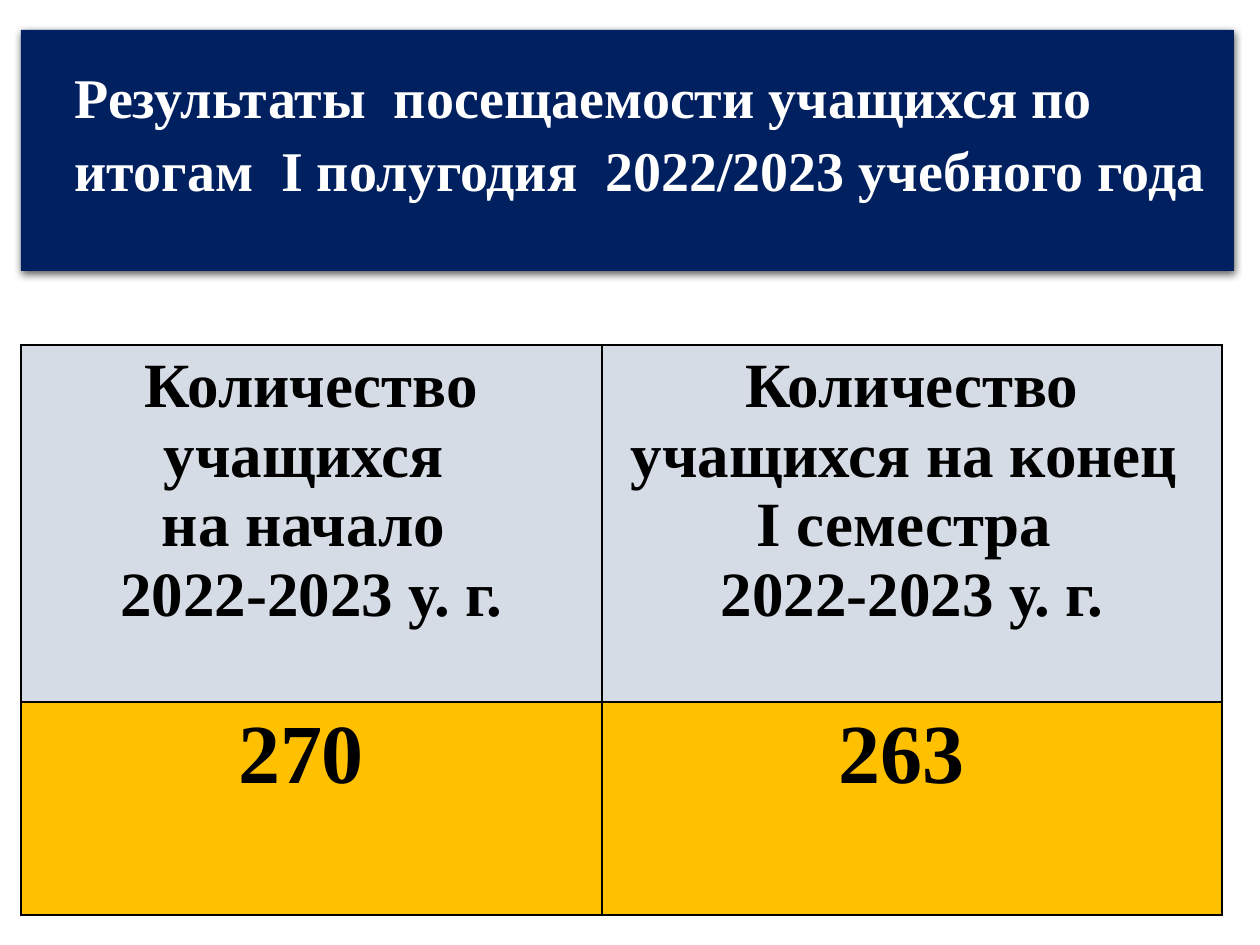
from lxml import etree
from pptx import Presentation
from pptx import util as u
from pptx.dml.color import RGBColor
from pptx.enum import shapes, text
from pptx.oxml import parse_xml
from pptx.oxml.ns import qn

TITLE = "Результаты  посещаемости учащихся по итогам  I полугодия  2022/2023 учебного года"
HEADERS = [
    ["Количество учащихся ", "на начало ", "2022-2023 у. г."],
    ["Количество учащихся на конец ", "I семестра ", "2022-2023 у. г."],
]
COUNTS = [["270 "], ["263 "]]

NAVY = RGBColor(0x00, 0x20, 0x60)
WHITE = RGBColor(0xFF, 0xFF, 0xFF)
BLACK = RGBColor(0x00, 0x00, 0x00)
GREY = RGBColor(0xD6, 0xDC, 0xE5)
AMBER = RGBColor(0xFF, 0xC0, 0x00)

# lines of each cell, text size, fill, row height in px
ROWS = [(HEADERS, 36, GREY, 357), (COUNTS, 48, AMBER, 213)]
COLUMN_WIDTHS = [581, 620]
FONT = "Times New Roman"
PX = u.Inches(1) / 126
NAMESPACE = 'xmlns:a="http://schemas.openxmlformats.org/drawingml/2006/main"'
SHADOW = (
    f'<a:effectLst {NAMESPACE}><a:outerShdw blurRad="57150" dist="19050" dir="5400000" '
    'algn="ctr" rotWithShape="0"><a:srgbClr val="000000"><a:alpha val="63000"/>'
    '</a:srgbClr></a:outerShdw></a:effectLst>'
)


def px(*lengths):
    return [u.Emu(round(length * PX)) for length in lengths]


def style(para, size, color):
    para.font.name = FONT
    para.font.size = u.Pt(size)
    para.font.bold = True
    para.font.color.rgb = color


def add_borders(cell):
    properties = cell._tc.get_or_add_tcPr()
    for index, side in enumerate(("lnL", "lnR", "lnT", "lnB")):
        line = etree.Element(qn(f"a:{side}"), w=str(u.Pt(1)))
        fill = etree.SubElement(line, qn("a:solidFill"))
        etree.SubElement(fill, qn("a:srgbClr"), val=str(BLACK))
        properties.insert(index, line)


def add_banner(page):
    banner = page.shapes.add_shape(shapes.MSO_SHAPE.RECTANGLE, *px(21, 30, 1213, 241))
    banner.fill.solid()
    banner.fill.fore_color.rgb = NAVY
    banner.line.fill.background()
    banner._element.spPr.append(parse_xml(SHADOW))
    page.shapes._spTree.insert(2, banner._element)  # behind the title


def fill_title(title):
    title.left, title.top, title.width, title.height = px(62, 49, 1222, 149)
    frame = title.text_frame
    frame.text = TITLE
    frame.word_wrap = True
    frame.auto_size = text.MSO_AUTO_SIZE.NONE
    frame.vertical_anchor = text.MSO_ANCHOR.TOP
    frame.margin_right = u.Inches(0.2)
    para = frame.paragraphs[0]
    para.alignment = text.PP_ALIGN.LEFT
    para.line_spacing = 1.1
    style(para, 32, WHITE)


def add_attendance_table(page):
    heights = [row[-1] for row in ROWS]
    area = px(21, 345, sum(COLUMN_WIDTHS), sum(heights))
    table = page.shapes.add_table(len(ROWS), len(COLUMN_WIDTHS), *area).table
    for column, width in zip(table.columns, px(*COLUMN_WIDTHS)):
        column.width = width
    for row, height, (cells, size, color, _) in zip(table.rows, px(*heights), ROWS):
        row.height = height
        for cell, lines in zip(row.cells, cells):
            cell.text = "\n".join(lines)
            cell.fill.solid()
            cell.fill.fore_color.rgb = color
            add_borders(cell)
            for para in cell.text_frame.paragraphs:
                para.alignment = text.PP_ALIGN.CENTER
                style(para, size, BLACK)


def main():
    deck = Presentation()
    deck.slide_width, deck.slide_height = px(1260, 945)
    page = deck.slides.add_slide(deck.slide_layouts.get_by_name("Title Only"))
    add_banner(page)
    fill_title(page.shapes.title)
    add_attendance_table(page)
    deck.save("out.pptx")


if __name__ == "__main__":
    main()
